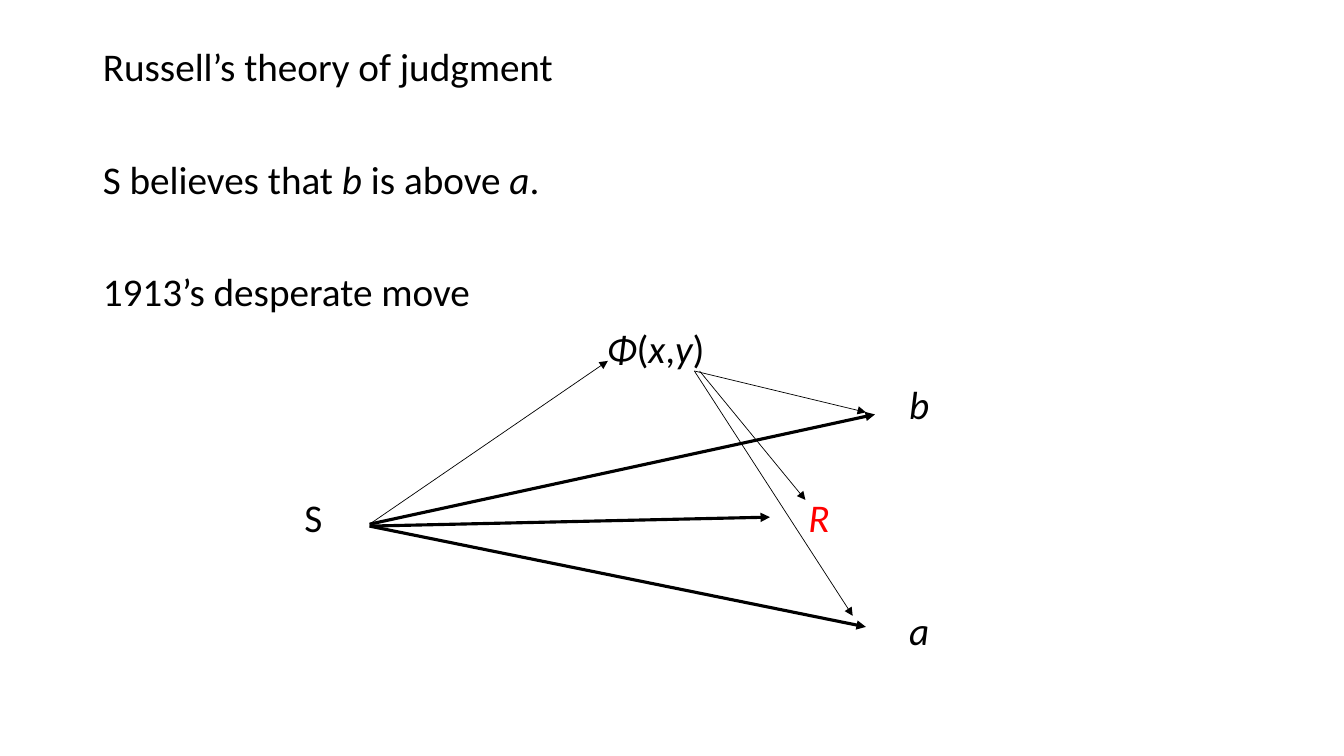
from lxml import etree
from pptx import Presentation
from pptx.dml.color import RGBColor
from pptx.enum import shapes, text
from pptx.oxml import ns
from pptx.util import Pt

BLACK = RGBColor(0, 0, 0)
RED = RGBColor(255, 0, 0)
FONT, SIZE = "Calibri", 28
LEFT, TOP = 73.44, 33.84
COLUMN, ROW, LINE = 72, 40.3, 30.8
THICK, THIN = 2.25, 0.5

# Texts are lists of (words, italic) pieces.
TITLE = [("Russell’s theory of judgment", False)]
STATEMENTS = [
    [("S believes that ", False), ("b", True), (" is above ", False),
     ("a", True), (".", False)],
    [("1913’s desperate move", False)],
]
FORM = [("Φ", True), ("(", False), ("x", True), (",", False),
        ("y", True), (")", False)]
# Each label: column, row, text, colour
LABELS = [
    (5, 5, FORM, BLACK),
    (8, 6, [("b", True)], BLACK),
    (2, 8, [("S", False)], BLACK),
    (7, 8, [("R", True)], RED),
    (8, 10, [("a", True)], BLACK),
]
# Each arrow: start, end, line width
ARROWS = [
    ((264, 374.4), (625, 296), THICK),
    ((264, 375.8), (550, 369.4), THICK),
    ((264, 375.8), (618.5, 447.8), THICK),
    ((264, 374.4), (434.2, 257.8), THIN),
    ((496, 265), (618.5, 294.5), THIN),
    ((499.7, 265), (575.3, 357.1), THIN),
    ((496, 265), (609.1, 439.9), THIN),
]


def write_text(sp, paragraphs, color=BLACK, gap=0):
    """Fill a frame without insets; gap is the space between paragraphs."""
    tf = sp.text_frame
    frame_format = {
        "margin_left": 0, "margin_right": 0, "margin_top": 0,
        "margin_bottom": 0, "word_wrap": True,
        "auto_size": text.MSO_AUTO_SIZE.NONE,
        "vertical_anchor": text.MSO_ANCHOR.TOP,
    }
    for name, value in frame_format.items():
        setattr(tf, name, value)
    for i, pieces in enumerate(paragraphs):
        p = tf.add_paragraph() if i else tf.paragraphs[0]
        p.alignment = text.PP_ALIGN.LEFT
        p.line_spacing = 0.9
        p.space_before = Pt(gap if i else 0)
        for words, italic in pieces:
            r = p.add_run()
            r.text = words
            font_format = {"name": FONT, "size": Pt(SIZE), "italic": italic}
            for name, value in font_format.items():
                setattr(r.font, name, value)
            r.font.color.rgb = color


def grid_box(column, row, width, rows=1):
    """Left, top, width and height of a box on the text grid."""
    return [Pt(v) for v in (LEFT + column * COLUMN, TOP + row * ROW,
                            width, rows * ROW)]


def add_title(slide):
    sp = slide.shapes.title
    sp.left, sp.top, sp.width, sp.height = grid_box(0, 0, 813)
    write_text(sp, [TITLE])


def add_statements(slide):
    sp = slide.shapes.add_textbox(*grid_box(0, 2, 813, rows=3))
    write_text(sp, STATEMENTS, gap=2 * ROW - LINE)


def add_label(slide, column, row, pieces, color):
    sp = slide.shapes.add_textbox(*grid_box(column, row, 1.25 * COLUMN))
    write_text(sp, [pieces], color)


def add_arrow(slide, start, end, width):
    points = [Pt(v) for v in (*start, *end)]
    sp = slide.shapes.add_connector(shapes.MSO_CONNECTOR.STRAIGHT, *points)
    sp.line.color.rgb = BLACK
    sp.line.width = Pt(width)
    etree.SubElement(sp.line._get_or_add_ln(), ns.qn("a:tailEnd"),
                     type="triangle")
    etree.SubElement(sp._element.spPr, ns.qn("a:effectLst"))


def main():
    prs = Presentation()
    prs.slide_width, prs.slide_height = Pt(960), Pt(540)
    slide = prs.slides.add_slide(prs.slide_layouts.get_by_name("Title Only"))
    add_title(slide)
    add_statements(slide)
    for label in LABELS:
        add_label(slide, *label)
    for arrow in ARROWS:
        add_arrow(slide, *arrow)
    prs.save("out.pptx")


if __name__ == "__main__":
    main()
